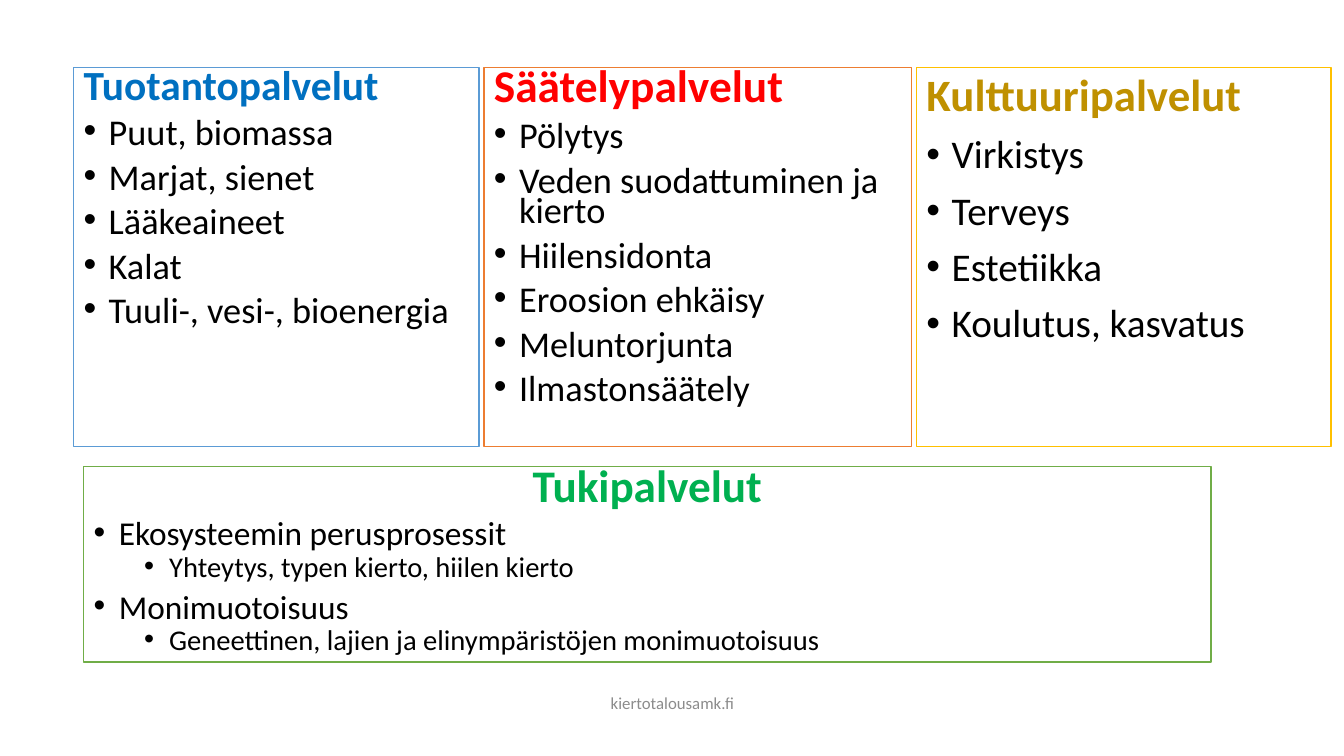
import lxml.etree
import pptx
import pptx.dml.color
import pptx.enum.shapes
import pptx.enum.text
import pptx.oxml.ns
import pptx.util

Inches = pptx.util.Inches
Pt = pptx.util.Pt
ALIGN = pptx.enum.text.PP_ALIGN


def colour(hex_string):
    return pptx.dml.color.RGBColor.from_string(hex_string)


class ServiceSlide:
    font = "Calibri"
    text_colour = "000000"
    item_indent = 0.25
    level_step = 0.5

    def __init__(self, slide):
        self.slide = slide

    def format_runs(self, paragraph, size, hex_string, bold=False):
        for run in paragraph.runs:
            run.font.name = self.font
            run.font.size = Pt(size)
            run.font.bold = bold
            run.font.color.rgb = colour(hex_string)

    def bullet(self, paragraph, level):
        paragraph.level = level
        properties = paragraph._p.get_or_add_pPr()
        margin = self.item_indent + level * self.level_step
        properties.set("marL", str(Inches(margin)))
        properties.set("indent", str(-Inches(self.item_indent)))
        for tag, attribute, value in (("a:buFont", "typeface", "Arial"), ("a:buChar", "char", "•")):
            element = lxml.etree.SubElement(properties, pptx.oxml.ns.qn(tag))
            element.set(attribute, value)

    def panel(self, left, top, width, height, border, heading, heading_size,
              heading_colour, items, sizes, spacing, heading_align=ALIGN.LEFT):
        box = self.slide.shapes.add_shape(
            pptx.enum.shapes.MSO_SHAPE.RECTANGLE,
            Inches(left), Inches(top), Inches(width), Inches(height))
        box.shadow.inherit = False
        box.fill.solid()
        box.fill.fore_color.rgb = colour("FFFFFF")
        box.line.color.rgb = colour(border)
        box.line.width = Pt(1)
        frame = box.text_frame
        frame.word_wrap = True
        frame.vertical_anchor = pptx.enum.text.MSO_ANCHOR.TOP
        title = frame.paragraphs[0]
        title.text = heading
        title.alignment = heading_align
        title.line_spacing = spacing
        self.format_runs(title, heading_size, heading_colour, bold=True)
        for level, text in items:
            item = frame.add_paragraph()
            item.text = text
            self.bullet(item, level)
            item.alignment = ALIGN.LEFT
            item.line_spacing = spacing
            item.space_before = Pt(5 if level else 10)
            self.format_runs(item, sizes[level], self.text_colour)

    def footer(self, left, top, width, height, text):
        box = self.slide.shapes.add_textbox(
            Inches(left), Inches(top), Inches(width), Inches(height))
        frame = box.text_frame
        frame.word_wrap = True
        frame.vertical_anchor = pptx.enum.text.MSO_ANCHOR.MIDDLE
        frame.text = text
        frame.paragraphs[0].alignment = ALIGN.CENTER
        self.format_runs(frame.paragraphs[0], 12, "8C8C8C")


def main():
    presentation = pptx.Presentation()
    presentation.slide_width = Inches(13.33)
    presentation.slide_height = Inches(7.5)
    services = ServiceSlide(presentation.slides.add_slide(presentation.slide_layouts[6]))

    columns = [
        (4.02, "5B9BD5", "Tuotantopalvelut", 29.6, "0070C0", 25.9, 0.7,
         ["Puut, biomassa", "Marjat, sienet", "Lääkeaineet", "Kalat",
          "Tuuli-, vesi-, bioenergia"]),
        (4.24, "ED7D31", "Säätelypalvelut", 32.4, "FF0000", 25.9, 0.7,
         ["Pölytys", "Veden suodattuminen ja kierto", "Hiilensidonta",
          "Eroosion ehkäisy", "Meluntorjunta", "Ilmastonsäätely"]),
        (4.11, "FFC000", "Kulttuuripalvelut", 32, "BF9000", 28, 0.9,
         ["Virkistys", "Terveys", "Estetiikka", "Koulutus, kasvatus"]),
    ]
    left, gap = 0.73, 0.05
    for width, border, heading, heading_size, heading_colour, size, spacing, items in columns:
        services.panel(left, 0.67, width, 3.76, border, heading, heading_size,
                       heading_colour, [(0, item) for item in items], [size], spacing)
        left += width + gap

    support = [
        (0, "Ekosysteemin perusprosessit"),
        (1, "Yhteytys, typen kierto, hiilen kierto"),
        (0, "Monimuotoisuus"),
        (1, "Geneettinen, lajien ja elinympäristöjen monimuotoisuus"),
    ]
    services.panel(0.83, 4.63, 11.18, 1.94, "70AD47", "Tukipalvelut", 32.3,
                   "00B050", support, [23.8, 20.4], 0.7, ALIGN.CENTER)
    services.footer(4.42, 6.77, 4.5, 0.4, "kiertotalousamk.fi")
    presentation.save("out.pptx")


if __name__ == "__main__":
    main()
